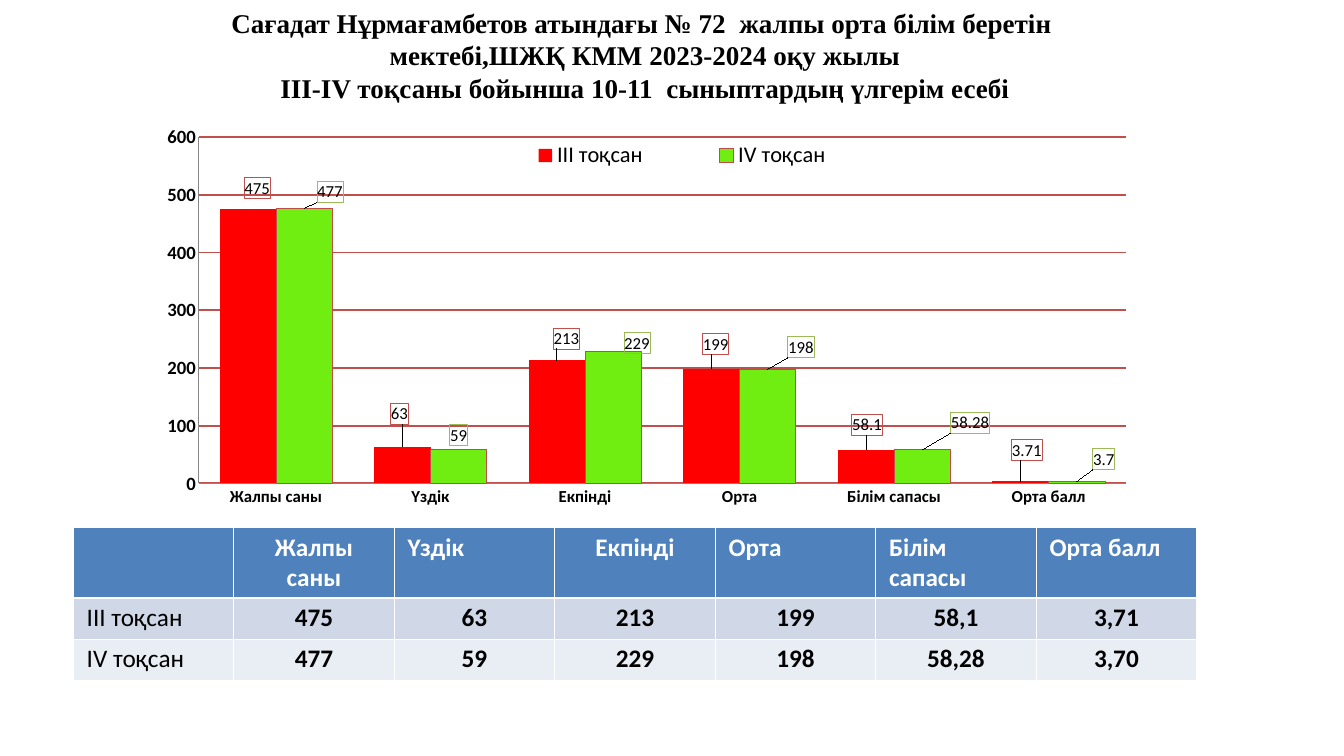
from lxml import etree
from pptx import Presentation
from pptx.chart.data import CategoryChartData
from pptx.dml.color import RGBColor
from pptx.enum.chart import XL_CHART_TYPE as ChartType, XL_LABEL_POSITION as LabelPosition
from pptx.enum.chart import XL_LEGEND_POSITION as LegendPosition, XL_TICK_MARK as TickMark
from pptx.enum.text import MSO_ANCHOR as Anchor, PP_ALIGN as Align
from pptx.oxml import parse_xml
from pptx.oxml.ns import nsdecls, qn
from pptx.util import Inches, Pt

TITLE = [
    "Сағадат Нұрмағамбетов атындағы № 72  жалпы орта білім беретін ",
    "мектебі,ШЖҚ КММ 2023-2024 оқу жылы",
    "ІIІ-ІV тоқсаны бойынша 10-11  сыныптардың үлгерім есебі",
]
CATEGORIES = ["Жалпы саны", "Үздік", "Екпінді", "Орта", "Білім сапасы", "Орта балл"]
SERIES = [
    {"name": "ІIІ тоқсан", "values": [475, 63, 213, 199, 58.1, 3.71],
     "fill": "FF0000", "line": None, "label_border": "C0504D",
     "shifts": [(0.9, -1.9), (-0.3, -4.7), (0.9, -2.1), (0.4, -2.6), (0.1, -2.8), (0.6, -4.2)]},
    {"name": "ІV тоқсан", "values": [477, 59, 229, 198, 58.28, 3.7],
     "fill": "70EE12", "line": "BF4C48", "label_border": "9BBB59",
     "shifts": [(2.5, -0.7), (0, -0.2), (2.3, 1.2), (3.2, -2.1), (4.6, -3.3), (2.6, -2.1)]},
]
TABLE_ROWS = [
    [""] + CATEGORIES,
    ["IІI тоқсан", "475", "63", "213", "199", "58,1", "3,71"],
    ["ІV тоқсан", "477", "59", "229", "198", "58,28", "3,70"],
]
CENTRED_HEADERS = {"Жалпы саны", "Екпінді"}


def color(value):
    return RGBColor.from_string(value)


def apply(target, formats):
    for name, value in formats.items():
        setattr(target, name, value)


def manual_layout(**shares):
    items = "".join(f'<c:{name} val="{value}"/>' for name, value in shares.items())
    return parse_xml(f'<c:layout {nsdecls("c")}><c:manualLayout>{items}</c:manualLayout></c:layout>')


class SlideBuilder:
    fonts = {"title": "Times New Roman", "body": "Calibri"}
    header_fill = "4F81BD"
    row_fills = ["D0D8E8", "E9EDF4"]
    grid_color = "C0504D"
    axis_color = "868686"

    def __init__(self, presentation):
        self.width = presentation.slide_width
        self.height = presentation.slide_height
        self.slide = presentation.slides.add_slide(presentation.slide_layouts[6])

    def box(self, left, top, width, height):
        return [int(share * size / 100) for share, size in
                zip((left, top, width, height), (self.width, self.height) * 2)]

    def style_font(self, font, size, bold=False, fill="000000", family="body"):
        apply(font, {"size": Pt(size), "bold": bold, "name": self.fonts[family]})
        font.color.rgb = color(fill)

    def title(self, lines, *area):
        frame = self.slide.shapes.add_textbox(*self.box(*area)).text_frame
        apply(frame, {"word_wrap": True, "margin_left": Inches(0.18), "margin_right": Inches(0.18),
                      "margin_top": Inches(0.09), "margin_bottom": Inches(0.09)})
        for index, line in enumerate(lines):
            paragraph = frame.add_paragraph() if index else frame.paragraphs[0]
            paragraph.alignment = Align.CENTER
            run = paragraph.add_run()
            run.text = line
            self.style_font(run.font, 29, True, family="title")

    def chart(self, categories, series_list, *area):
        data = CategoryChartData()
        data.categories = categories
        for entry in series_list:
            data.add_series(entry["name"], entry["values"])
        frame = self.slide.shapes.add_chart(ChartType.COLUMN_CLUSTERED, *self.box(*area), data)
        chart = frame.chart
        self.style_font(chart.font, 18)
        apply(chart, {"has_title": False, "has_legend": True})
        apply(chart.legend, {"position": LegendPosition.BOTTOM, "include_in_layout": True})
        self.style_font(chart.legend.font, 24)
        chart.legend._element.find(qn("c:legendPos")).addnext(
            manual_layout(xMode="edge", yMode="edge", x=0.36, y=0.03, w=0.41, h=0.08))
        plot = chart.plots[0]
        apply(plot, {"gap_width": 75, "overlap": 0, "vary_by_categories": False})
        plot_area = chart._chartSpace.chart.plotArea
        for layout in plot_area.findall(qn("c:layout")):
            plot_area.remove(layout)
        plot_area.insert(0, manual_layout(layoutTarget="inner", xMode="edge", yMode="edge",
                                          x=0.1, y=0.027, w=0.892, h=0.814))
        for axis, size in ((chart.category_axis, 18), (chart.value_axis, 20)):
            apply(axis, {"major_tick_mark": TickMark.NONE, "minor_tick_mark": TickMark.NONE})
            self.style_font(axis.tick_labels.font, size, True)
            axis.format.line.color.rgb = color(self.axis_color)
        apply(chart.value_axis, {"minimum_scale": 0, "maximum_scale": 600, "major_unit": 100,
                                 "has_major_gridlines": True})
        grid_line = chart.value_axis.major_gridlines.format.line
        grid_line.color.rgb = color(self.grid_color)
        grid_line.width = Pt(2)
        for series, entry in zip(plot.series, series_list):
            self.series(series, entry)

    def series(self, series, entry):
        series.invert_if_negative = False
        series.format.fill.solid()
        series.format.fill.fore_color.rgb = color(entry["fill"])
        if entry["line"]:
            series.format.line.color.rgb = color(entry["line"])
            series.format.line.width = Pt(0.75)
        for index in range(len(entry["shifts"])):
            label = series.points[index].data_label
            self.style_font(label.font, 18)
            label.position = LabelPosition.OUTSIDE_END
        labels = series._element.findall(f'{qn("c:dLbls")}/{qn("c:dLbl")}')
        for label, (across, down) in zip(labels, entry["shifts"]):
            label.find(qn("c:idx")).addnext(manual_layout(x=across / 100, y=down / 100))
            label.find(qn("c:txPr")).addprevious(parse_xml(
                f'<c:spPr {nsdecls("c", "a")}><a:noFill/><a:ln w="9525"><a:solidFill>'
                f'<a:srgbClr val="{entry["label_border"]}"/></a:solidFill></a:ln></c:spPr>'))

    def borders(self, cell, bottom):
        properties = cell._tc.get_or_add_tcPr()
        for index, (side, points) in enumerate(zip("LRTB", (1, 1, 1, bottom))):
            line = etree.Element(qn(f"a:ln{side}"), w=str(Pt(points)))
            fill = etree.SubElement(line, qn("a:solidFill"))
            etree.SubElement(fill, qn("a:srgbClr"), val="FFFFFF")
            properties.insert(index, line)

    def table(self, rows, heights, *area):
        table = self.slide.shapes.add_table(len(rows), len(rows[0]), *self.box(*area)).table
        for row, height in zip(table.rows, heights):
            row.height = int(height * self.height / 100)
        for row_index, row in enumerate(rows):
            header = row_index == 0
            for column_index, text in enumerate(row):
                cell = table.cell(row_index, column_index)
                apply(cell, {"text": text, "vertical_anchor": Anchor.TOP,
                             "margin_left": Inches(0.2), "margin_right": Inches(0.2),
                             "margin_top": Inches(0.07), "margin_bottom": Inches(0.07)})
                cell.fill.solid()
                cell.fill.fore_color.rgb = color(
                    self.header_fill if header else self.row_fills[row_index - 1])
                self.borders(cell, 3 if header else 1)
                paragraph = cell.text_frame.paragraphs[0]
                centred = text in CENTRED_HEADERS if header else column_index > 0
                paragraph.alignment = Align.CENTER if centred else Align.LEFT
                for run in paragraph.runs:
                    self.style_font(run.font, 27, header or column_index > 0,
                                    "FFFFFF" if header else "000000")


def main():
    presentation = Presentation()
    apply(presentation, {"slide_width": Inches(20), "slide_height": Inches(11.25)})
    builder = SlideBuilder(presentation)
    builder.chart(CATEGORIES, SERIES, 7.05, 16.62, 77.35, 56.27)
    builder.title(TITLE, 4.7, 0, 86.6, 14.58)
    builder.table(TABLE_ROWS, (9.33, 5.42, 5.42), 5.45, 69.78, 83.6, 20.17)
    presentation.save("out.pptx")


if __name__ == "__main__":
    main()
